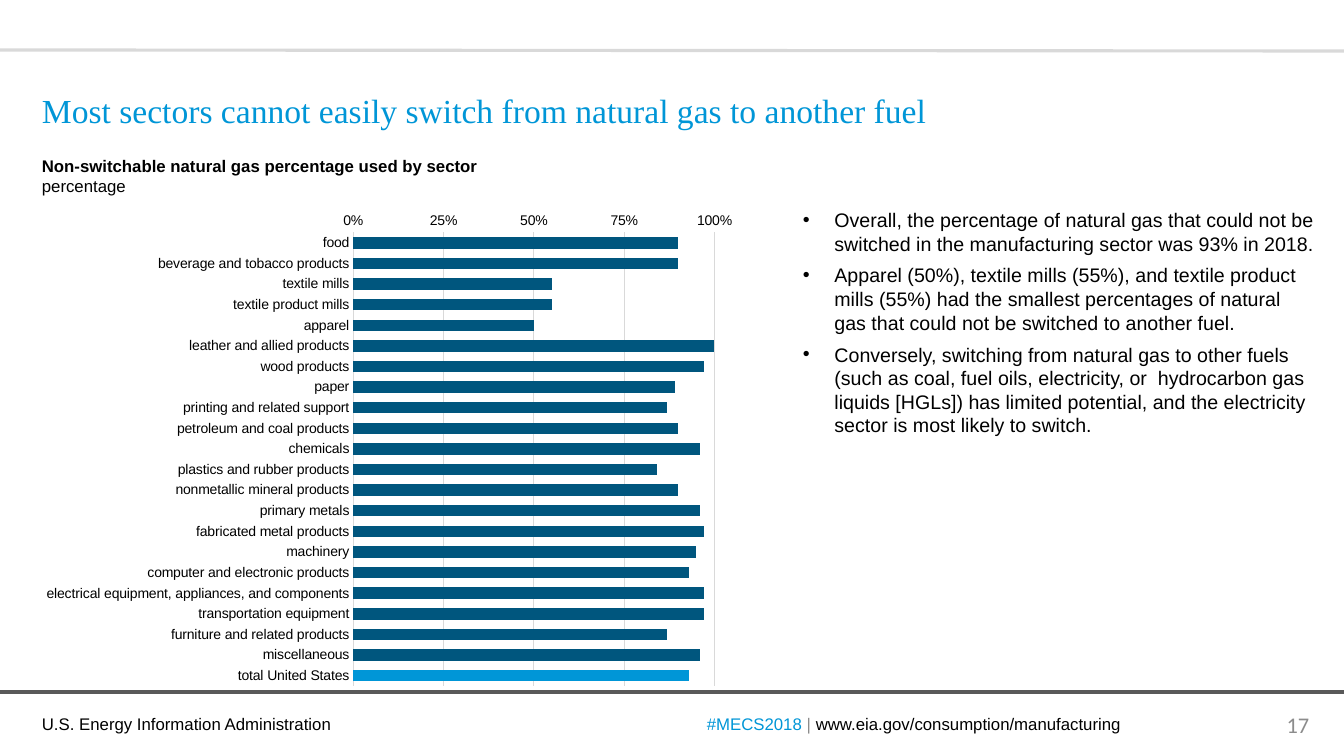
from lxml import etree
from pptx import Presentation
from pptx import util as u
from pptx.chart import data as cd
from pptx.dml.color import RGBColor
from pptx.enum import chart as ce, shapes, text
from pptx.oxml import ns

BLUE, NAVY, BLACK = "0096D7", "00567E", "000000"
GRAY, LIGHT, DARK = "8C8C8C", "D9D9D9", "595959"
LEFT = 32


def px(n):
    return u.Emu(round(n * 914400 / 100.8))


def rgb(hex):
    return RGBColor.from_string(hex)


def sub(parent, tag, **attrs):
    node = etree.SubElement(parent, ns.qn(tag))
    for key, val in attrs.items():
        node.set(key, str(val))
    return node


def style(font, size=12, name="Arial", color=BLACK, bold=False):
    font.size, font.name, font.bold = u.Pt(size), name, bold
    font.color.rgb = rgb(color)


def write(para, words, **form):
    run = para.add_run()
    run.text = words
    style(run.font, **form)


class Page:
    def __init__(self, deck):
        self.slide = deck.slides.add_slide(deck.slide_layouts[6])
        self.items = self.slide.shapes

    def rule(self, y1, y2, color):
        line = self.items.add_connector(
            shapes.MSO_CONNECTOR.STRAIGHT, 0, px(y1), px(1344), px(y2))
        line.line.color.rgb = rgb(color)
        line.line.width = u.Pt(2.25)
        sub(line._element.spPr, "a:effectLst")

    def box(self, x, y, w, h, paras, anchor="TOP", align="LEFT",
            bullet=False, **form):
        """Each paragraph is a list of (words, format) runs."""
        frame = self.items.add_textbox(px(x), px(y), px(w), px(h)).text_frame
        frame.word_wrap = True
        frame.vertical_anchor = text.MSO_ANCHOR[anchor]
        for i, runs in enumerate(paras):
            para = frame.add_paragraph() if i else frame.paragraphs[0]
            para.alignment = text.PP_ALIGN[align]
            if bullet:
                para.space_after = u.Pt(6)
                props = para._p.get_or_add_pPr()
                props.set("marL", str(px(31.5)))
                props.set("indent", str(-px(31.5)))
                sub(props, "a:buFont", typeface="Arial")
                sub(props, "a:buChar", char="•")
            for words, own in runs:
                write(para, words, **{**form, **own})

    def bars(self, x, y, w, h, rows, accent, inner):
        data = cd.CategoryChartData(number_format="0%")
        data.categories = [name for name, _ in rows]
        data.add_series("Series 1", [val / 100 for _, val in rows])
        chart = self.items.add_chart(ce.XL_CHART_TYPE.BAR_CLUSTERED, px(x),
                                     px(y), px(w), px(h), data).chart
        chart.has_legend = chart.has_title = False
        style(chart.font, 10, "Calibri")

        # Bars
        plot = chart.plots[0]
        plot.gap_width, plot.vary_by_categories = 80, False
        bar = plot.series[0]
        bar.invert_if_negative = False
        for part, color in ((bar, NAVY), (bar.points[accent], BLUE)):
            part.format.fill.solid()
            part.format.fill.fore_color.rgb = rgb(color)

        # Axes
        cat, val = chart.category_axis, chart.value_axis
        for axis in (cat, val):
            axis.major_tick_mark = axis.minor_tick_mark = ce.XL_TICK_MARK.NONE
            style(axis.tick_labels.font, 10)
        cat.reverse_order = True
        val.minimum_scale, val.maximum_scale, val.major_unit = 0, 1, 0.25
        val.tick_labels.number_format = "0%"
        val.tick_labels.number_format_is_linked = False
        val.has_major_gridlines = True
        val.format.line.fill.background()
        for line in (cat.format.line, val.major_gridlines.format.line):
            line.color.rgb, line.width = rgb(LIGHT), u.Pt(0.75)

        # Plot area, as shares of the chart frame
        area = chart._chartSpace.chart.plotArea
        for old in area.findall(ns.qn("c:layout")):
            area.remove(old)
        layout = etree.Element(ns.qn("c:layout"))
        area.insert(0, layout)
        man = sub(layout, "c:manualLayout")
        sub(man, "c:layoutTarget", val="inner")
        for mode in ("xMode", "yMode"):
            sub(man, "c:" + mode, val="edge")
        for key, share in zip("xywh", inner):
            sub(man, "c:" + key, val=share)


SECTORS = [
    ("food", 90), ("beverage and tobacco products", 90),
    ("textile mills", 55), ("textile product mills", 55), ("apparel", 50),
    ("leather and allied products", 100), ("wood products", 97),
    ("paper", 89), ("printing and related support", 87),
    ("petroleum and coal products", 90), ("chemicals", 96),
    ("plastics and rubber products", 84),
    ("nonmetallic mineral products", 90), ("primary metals", 96),
    ("fabricated metal products", 97), ("machinery", 95),
    ("computer and electronic products", 93),
    ("electrical equipment, appliances, and components", 97),
    ("transportation equipment", 97), ("furniture and related products", 87),
    ("miscellaneous", 96), ("total United States", 93),
]
POINTS = [
    "Overall, the percentage of natural gas that could not be switched in "
    "the manufacturing sector was 93% in 2018.",
    "Apparel (50%), textile mills (55%), and textile product mills (55%) had "
    "the smallest percentages of natural gas that could not be switched to "
    "another fuel.",
    "Conversely, switching from natural gas to other fuels (such as coal, "
    "fuel oils, electricity, or  hydrocarbon gas liquids [HGLs]) has limited "
    "potential, and the electricity sector is most likely to switch.",
]


def main():
    deck = Presentation()
    deck.slide_width, deck.slide_height = px(1344), px(756)
    page = Page(deck)

    # Rules and footer
    page.rule(692, 692, DARK)
    page.rule(50, 51, LIGHT)
    page.box(LEFT, 709, 373, 30,
             [[("U.S. Energy Information Administration", {})]])
    page.box(687, 704, 454, 40, [[
        ("#MECS2018 ", {"color": BLUE}), ("| ", {"color": GRAY}),
        ("www.eia.gov/consumption/manufacturing", {})]],
        anchor="MIDDLE", align="CENTER")
    page.box(1268, 705, 60, 40, [[("17", {})]], anchor="MIDDLE",
             align="CENTER", size=16, name="Calibri", color=GRAY)

    # Title
    page.box(LEFT, 51, 1279, 84, [[(
        "Most sectors cannot easily switch from natural gas to another fuel",
        {})]], anchor="BOTTOM", size=24, name="Times New Roman", color=BLUE)

    # Chart with its heading
    page.box(LEFT, 151, 521, 50, [
        [("Non-switchable natural gas percentage used by sector",
          {"bold": True})],
        [("percentage", {})]])
    page.bars(LEFT, 203, 714, 493, SECTORS, accent=len(SECTORS) - 1,
              inner=(0.45, 0.06, 0.506, 0.92))

    # Findings
    page.box(793, 203, 535, 305, [[(line, {})] for line in POINTS],
             bullet=True, size=14)
    deck.save("out.pptx")


if __name__ == "__main__":
    main()
